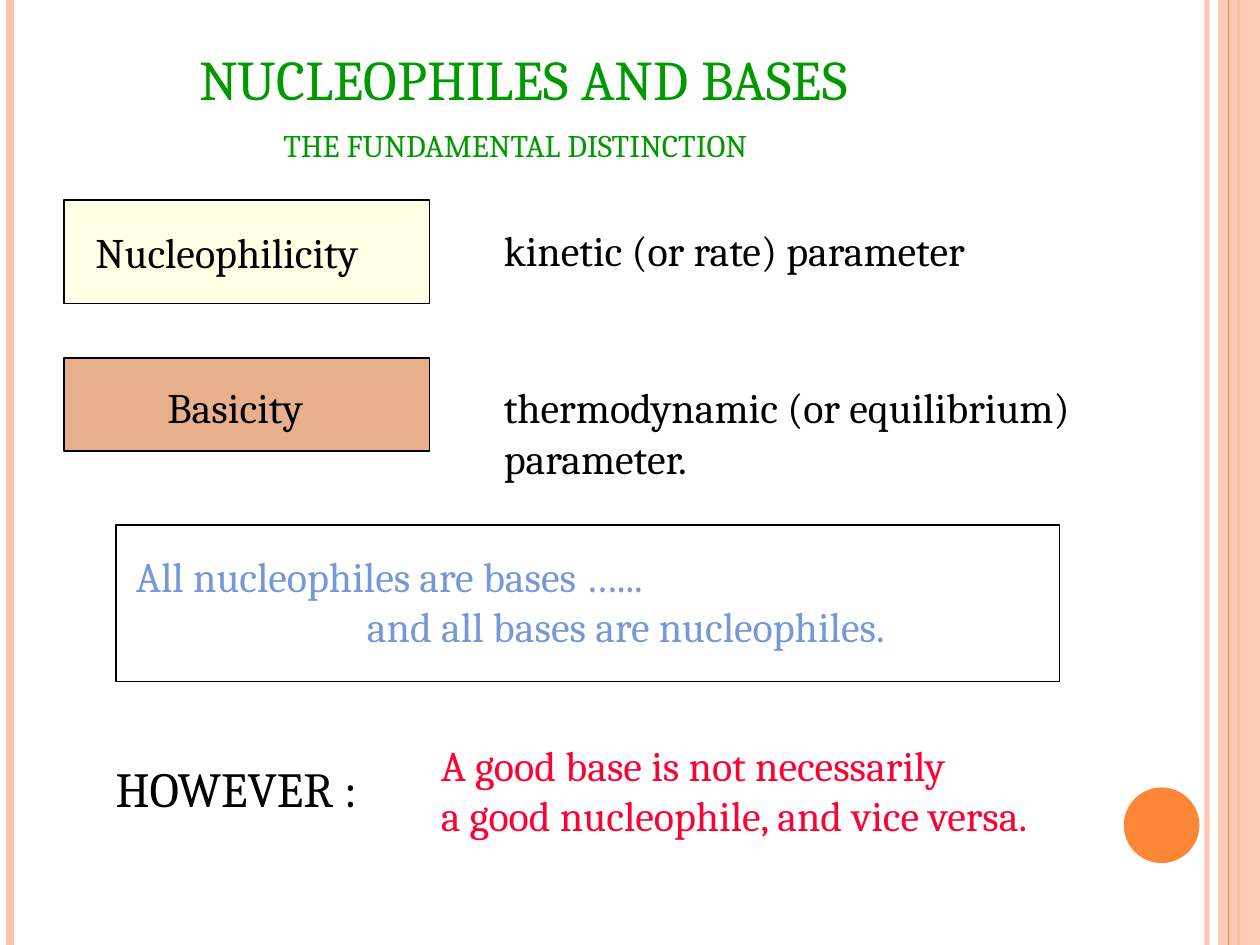
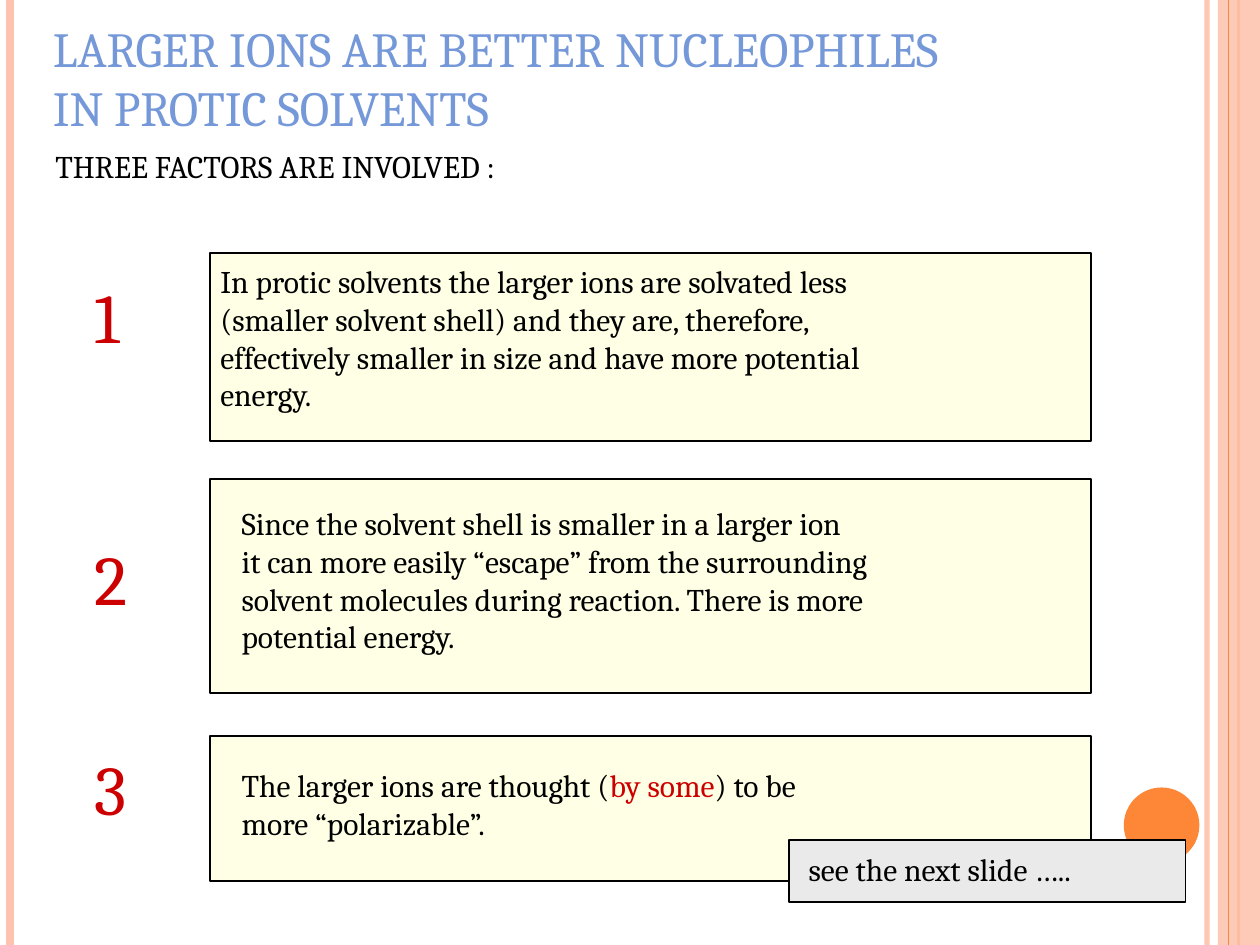
from lxml.etree import SubElement
from pptx import Presentation
from pptx.dml.color import RGBColor
from pptx.enum.shapes import MSO_CONNECTOR, MSO_SHAPE
from pptx.enum.text import MSO_ANCHOR, MSO_AUTO_SIZE, PP_ALIGN
from pptx.oxml.ns import qn
from pptx.util import Pt

FONT = "Cambria"
WIDTH, HEIGHT = 720, 540

BLACK = RGBColor(0x00, 0x00, 0x00)
GREEN = RGBColor(0x00, 0x99, 0x00)
BLUE = RGBColor(0x75, 0x98, 0xD9)
CRIMSON = RGBColor(0xFF, 0x00, 0x33)
DARK_RED = RGBColor(0xCC, 0x00, 0x00)
CREAM = RGBColor(0xFF, 0xFF, 0xCC)
RUST = RGBColor(0xD2, 0x61, 0x1C)
GRAY = RGBColor(0xEA, 0xEA, 0xEA)
PEACH = RGBColor(0xFE, 0xC3, 0xAE)
ORANGE = RGBColor(0xFE, 0x86, 0x37)


def set_opacity(shape, percent):
    """Apply an opacity to the first colour of a shape or line."""
    color = next(shape._element.iter(qn("a:srgbClr")))
    SubElement(color, qn("a:alpha"), val=str(percent * 1000))


def add_block(slide, box, fill=None, opacity=100, outline=BLACK,
              preset=MSO_SHAPE.RECTANGLE):
    shape = slide.shapes.add_shape(preset, *map(Pt, box))
    shape.shadow.inherit = False
    if fill is None:
        shape.fill.background()
    else:
        shape.fill.solid()
        shape.fill.fore_color.rgb = fill
        if opacity < 100:
            set_opacity(shape, opacity)
    if outline is None:
        shape.line.fill.background()
    else:
        shape.line.color.rgb = outline
        shape.line.width = Pt(1)
    return shape


def add_stripe(slide, x, color, width, opacity=100):
    stripe = slide.shapes.add_connector(
        MSO_CONNECTOR.STRAIGHT, Pt(x), Pt(0), Pt(x), Pt(HEIGHT))
    stripe.line.color.rgb = color
    stripe.line.width = Pt(width)
    if opacity < 100:
        set_opacity(stripe, opacity)
    SubElement(stripe._element.spPr, qn("a:effectLst"))
    return stripe


def write_lines(frame, lines, size, color):
    """Write one paragraph per line; a line is a string or (text, color) runs."""
    frame.word_wrap = True
    frame.auto_size = MSO_AUTO_SIZE.NONE
    frame.vertical_anchor = MSO_ANCHOR.TOP
    for index, line in enumerate(lines):
        paragraph = frame.add_paragraph() if index else frame.paragraphs[0]
        paragraph.alignment = PP_ALIGN.LEFT
        paragraph.font.name = FONT
        paragraph.font.size = Pt(size)
        paragraph.font.color.rgb = color
        runs = [(line, None)] if isinstance(line, str) else line
        for text, run_color in runs:
            run = paragraph.add_run()
            run.text = text
            if run_color is not None:
                run.font.color.rgb = run_color


def add_text(slide, box, lines, size, color=BLACK):
    text_box = slide.shapes.add_textbox(*map(Pt, box))
    write_lines(text_box.text_frame, lines, size, color)
    return text_box


def set_title(slide, box, lines, size, color):
    title = slide.shapes.title
    title.left, title.top, title.width, title.height = map(Pt, box)
    write_lines(title.text_frame, lines, size, color)


def decorate_layout(layout, slide):
    """Build the edge stripes and the disc, then move them to the layout."""
    decorations = [
        add_stripe(slide, 689.8, PEACH, 3, opacity=93),
        add_stripe(slide, 5.8, PEACH, 4.5),
        add_stripe(slide, 707.8, ORANGE, 1.5),
        add_block(slide, (696, 0, WIDTH - 696, HEIGHT), PEACH, 87, outline=None),
        add_stripe(slide, 702, ORANGE, 0.75),
        add_block(slide, (642.2, 450, 43.2, 43.2), ORANGE, outline=None,
                  preset=MSO_SHAPE.OVAL),
    ]
    for number, shape in enumerate(decorations, start=100):
        next(shape._element.iter(qn("p:cNvPr"))).set("id", str(number))
        layout.shapes._spTree.append(shape._element)


def build_distinction(slide):
    set_title(slide, (106.6, 21.6, 467.3, 45.4),
              ["NUCLEOPHILES AND BASES"], 32, GREEN)
    add_text(slide, (154.8, 68.4, 354.2, 31),
             ["THE FUNDAMENTAL DISTINCTION"], 18, GREEN)

    # The two terms and what each one measures
    add_block(slide, (36.7, 114.5, 208.8, 59), CREAM, 50)
    add_text(slide, (47.5, 126, 188, 36), ["Nucleophilicity"], 24)
    add_text(slide, (280.8, 124.6, 323.3, 36), ["kinetic (or rate) parameter"], 24)
    add_block(slide, (36.7, 204.5, 208.8, 53.3), RUST, 50)
    add_text(slide, (88.6, 214.6, 108, 36), ["Basicity"], 24)
    add_text(slide, (280.8, 214.6, 388, 64.8),
             ["thermodynamic (or equilibrium)", "parameter."], 24)

    # Framed statement, its second line indented
    statement = add_text(slide, (70.6, 311, 524.2, 64.8),
                         ["All nucleophiles are bases …...",
                          "and all bases are nucleophiles."], 24, BLUE)
    second_line = statement.text_frame.paragraphs[1]
    second_line._p.get_or_add_pPr().set("marL", str(Pt(132)))
    add_block(slide, (66.2, 300.2, 539.3, 89.3))

    # Caveat
    add_text(slide, (59, 429.8, 176.4, 41), ["HOWEVER :"], 28)
    add_text(slide, (244.8, 419, 424.8, 64.8),
             ["A good base is not necessarily",
              "a good nucleophile, and vice versa."], 24, CRIMSON)


def build_factors(slide):
    set_title(slide, (23, 7.2, 634.3, 74.2),
              ["LARGER IONS ARE BETTER NUCLEOPHILES", "IN PROTIC SOLVENTS"],
              28, BLUE)
    add_text(slide, (24.5, 80.6, 354.2, 31), ["THREE FACTORS ARE INVOLVED :"], 18)

    # Number top, block top and height, text left and top, lines
    factors = [
        (152.6, 144.7, 107.3, 118.8, 146.2,
         ["In protic solvents the larger ions are solvated less",
          "(smaller solvent shell) and they are, therefore,",
          "effectively smaller in size and have more potential",
          "energy."]),
        (302.4, 273.6, 122.4, 131, 284.4,
         ["Since the solvent shell is smaller in a larger ion",
          "it can more easily “escape” from the surrounding",
          "solvent molecules during reaction. There is more",
          "potential energy."]),
        (422.6, 420.5, 82.8, 131, 434.2,
         [[("The larger ions are thought (", None), ("by some", DARK_RED),
           (") to be", None)],
          "more “polarizable”."]),
    ]
    for number, factor in enumerate(factors, start=1):
        number_top, block_top, block_height, text_left, text_top, lines = factor
        add_block(slide, (120.2, block_top, 503.3, block_height), CREAM, 50)
        add_text(slide, (46.8, number_top, 38.2, 55.4), [str(number)], 40, DARK_RED)
        add_text(slide, (text_left, text_top, 490, 6 + 24.3 * len(lines)), lines, 18)

    # Pointer to the next slide
    add_block(slide, (450.7, 480.2, 226.8, 35.3), GRAY)
    add_text(slide, (455, 482.4, 220.3, 31), ["see the next slide ….."], 18)


def main():
    presentation = Presentation()
    presentation.slide_width, presentation.slide_height = Pt(WIDTH), Pt(HEIGHT)
    title_only = presentation.slide_layouts[5]
    distinction = presentation.slides.add_slide(title_only)
    decorate_layout(title_only, distinction)
    build_distinction(distinction)
    build_factors(presentation.slides.add_slide(title_only))
    presentation.save("out.pptx")


if __name__ == "__main__":
    main()
